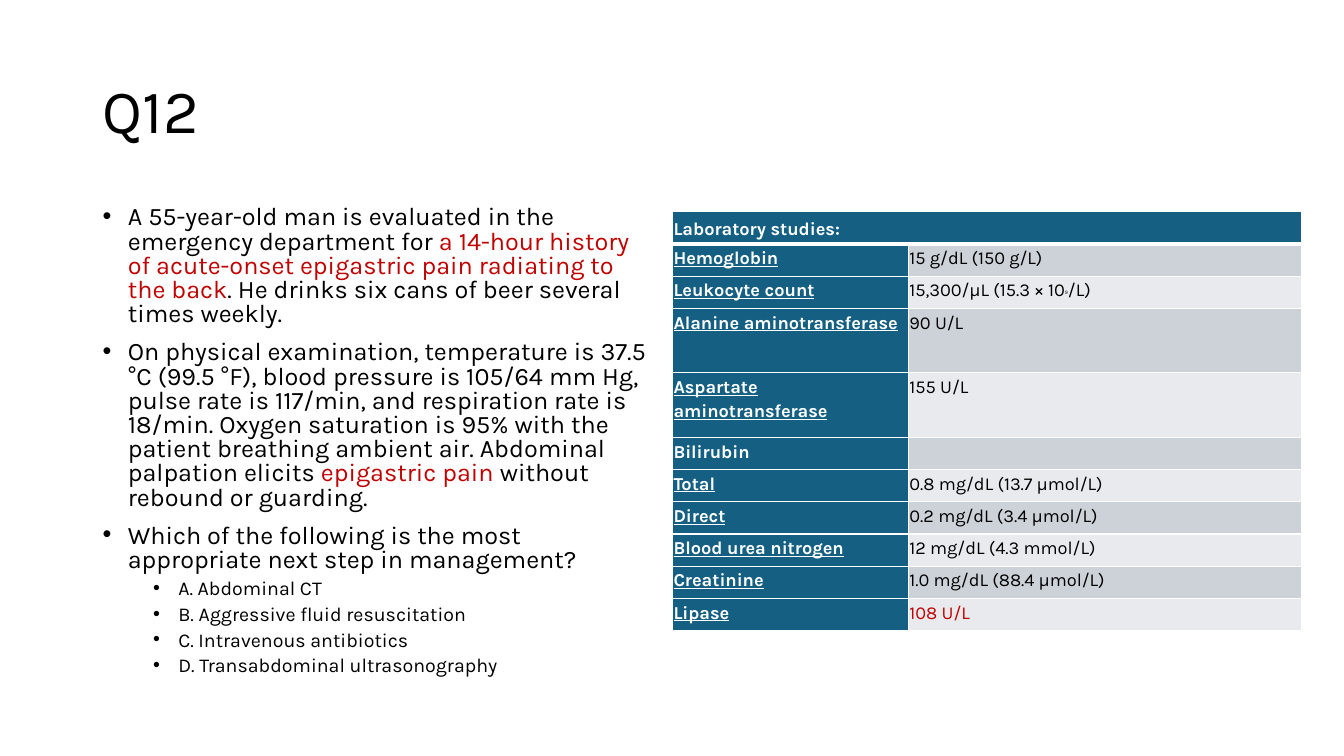
from lxml import etree
from pptx import Presentation
from pptx.dml.color import RGBColor
from pptx.enum import text
from pptx.oxml import ns
from pptx.util import Inches, Pt

BLACK, WHITE, RED, TEAL = "000000", "FFFFFF", "C00000", "156082"
BANDS = ["CCD2D8", "E8EAED"]


def sub(parent, tag, **attrs):
    return etree.SubElement(parent, ns.qn(tag), attrs)


def add_run(p, words, color, **fmt):
    r = p.add_run()
    r.text = words
    r.font.color.rgb = RGBColor.from_string(color)
    for name, value in {"name": "Karla", **fmt}.items():
        setattr(r.font, name, value)
    return r


prs = Presentation()
prs.slide_width, prs.slide_height = Inches(13.33), Inches(7.5)
s = prs.slides.add_slide(prs.slide_layouts[5])

# Title
title = s.shapes.title
title.left, title.top = Inches(0.92), Inches(0.4)
title.width, title.height = Inches(11.5), Inches(1.45)
tf = title.text_frame
tf.vertical_anchor = text.MSO_ANCHOR.MIDDLE
p = tf.paragraphs[0]
p.alignment = text.PP_ALIGN.LEFT
p.line_spacing = 0.9
add_run(p, "Q12", BLACK, size=Pt(44))

# Case description: (level, runs)
case = [
    (0, [("A 55-year-old man is evaluated in the emergency department for ", BLACK),
         ("a 14-hour history of acute-onset epigastric pain radiating to the back", RED),
         (". He drinks six cans of beer several times weekly.", BLACK)]),
    (0, [("On physical examination, temperature is 37.5 °C (99.5 °F), blood pressure is "
          "105/64 mm Hg, pulse rate is 117/min, and respiration rate is 18/min. Oxygen "
          "saturation is 95% with the patient breathing ambient air. Abdominal palpation "
          "elicits ", BLACK),
         ("epigastric pain ", RED),
         ("without rebound or guarding.", BLACK)]),
    (0, [("Which of the following is the most appropriate next step in management?", BLACK)]),
    (1, [("A. Abdominal CT", BLACK)]),
    (1, [("B. Aggressive fluid resuscitation", BLACK)]),
    (1, [("C. Intravenous antibiotics", BLACK)]),
    (1, [("D. Transabdominal ultrasonography", BLACK)]),
]
sizes, gaps, indents = [18, 14], [10, 5], [0.25, 0.75]
tf = s.shapes.add_textbox(Inches(0.92), Inches(2), Inches(5.67), Inches(4.76)).text_frame
tf.word_wrap = True
for i, (level, runs) in enumerate(case):
    p = tf.add_paragraph() if i else tf.paragraphs[0]
    p.level = level
    p.line_spacing = 0.8
    p.space_before = Pt(gaps[level] if i else 0)
    pPr = p._p.get_or_add_pPr()
    pPr.set("marL", str(Inches(indents[level])))
    pPr.set("indent", str(Inches(-0.25)))
    sub(pPr, "a:buFont", typeface="Arial")
    sub(pPr, "a:buChar", char="•")
    for words, color in runs:
        add_run(p, words, color, size=Pt(sizes[level]))

# Laboratory table
labs = [
    ("Laboratory studies:", ""),
    ("Hemoglobin", "15 g/dL (150 g/L)"),
    ("Leukocyte count", "15,300/μL (15.3 × 10^9^/L)"),
    ("Alanine aminotransferase", "90 U/L"),
    ("Aspartate aminotransferase", "155 U/L"),
    ("Bilirubin", ""),
    ("Total", "0.8 mg/dL (13.7 μmol/L)"),
    ("Direct", "0.2 mg/dL (3.4 μmol/L)"),
    ("Blood urea nitrogen", "12 mg/dL (4.3 mmol/L)"),
    ("Creatinine", "1.0 mg/dL (88.4 μmol/L)"),
    ("Lipase", "108 U/L"),
]
plain = {"Laboratory studies:", "Bilirubin"}
table = s.shapes.add_table(len(labs), 2, Inches(6.67), Inches(2.1),
                           Inches(6.24), Inches(4.16)).table
table.columns[0].width, table.columns[1].width = Inches(2.34), Inches(3.9)
for i, row in enumerate(labs):
    table.rows[i].height = Inches(0.64 if "aminotransferase" in row[0] else 0.32)
    for j, words in enumerate(row):
        cell = table.cell(i, j)
        for side in ("left", "top", "right", "bottom"):
            setattr(cell, f"margin_{side}", Inches(0.01))
        cell.vertical_anchor = text.MSO_ANCHOR.TOP if i else text.MSO_ANCHOR.MIDDLE

        # White borders, heavier around the header's lower edge
        tcPr = cell._tc.get_or_add_tcPr()
        for edge in "LRTB":
            heavy = (i, edge) in [(0, "B"), (1, "T")]
            ln = sub(tcPr, f"a:ln{edge}", w=str(Pt(3 if heavy else 1)))
            sub(sub(ln, "a:solidFill"), "a:srgbClr", val=WHITE)
        cell.fill.solid()
        fill = TEAL if j == 0 or i == 0 else BANDS[(i - 1) % 2]
        cell.fill.fore_color.rgb = RGBColor.from_string(fill)

        p = cell.text_frame.paragraphs[0]
        p.line_spacing = 1.15
        if not words:
            sub(p._p, "a:endParaRPr", sz="1300")
        elif j == 0:
            add_run(p, words, WHITE, size=Pt(13), bold=True, underline=words not in plain)
        else:
            color = RED if row[0] == "Lipase" else BLACK
            # Text between carets is superscript
            for k, part in enumerate(words.split("^")):
                r = add_run(p, part, color, size=Pt(6.5 if k % 2 else 13), bold=False)
                if k % 2:
                    r.font._element.set("baseline", "30000")
table.cell(0, 0).merge(table.cell(0, 1))

prs.save("out.pptx")
